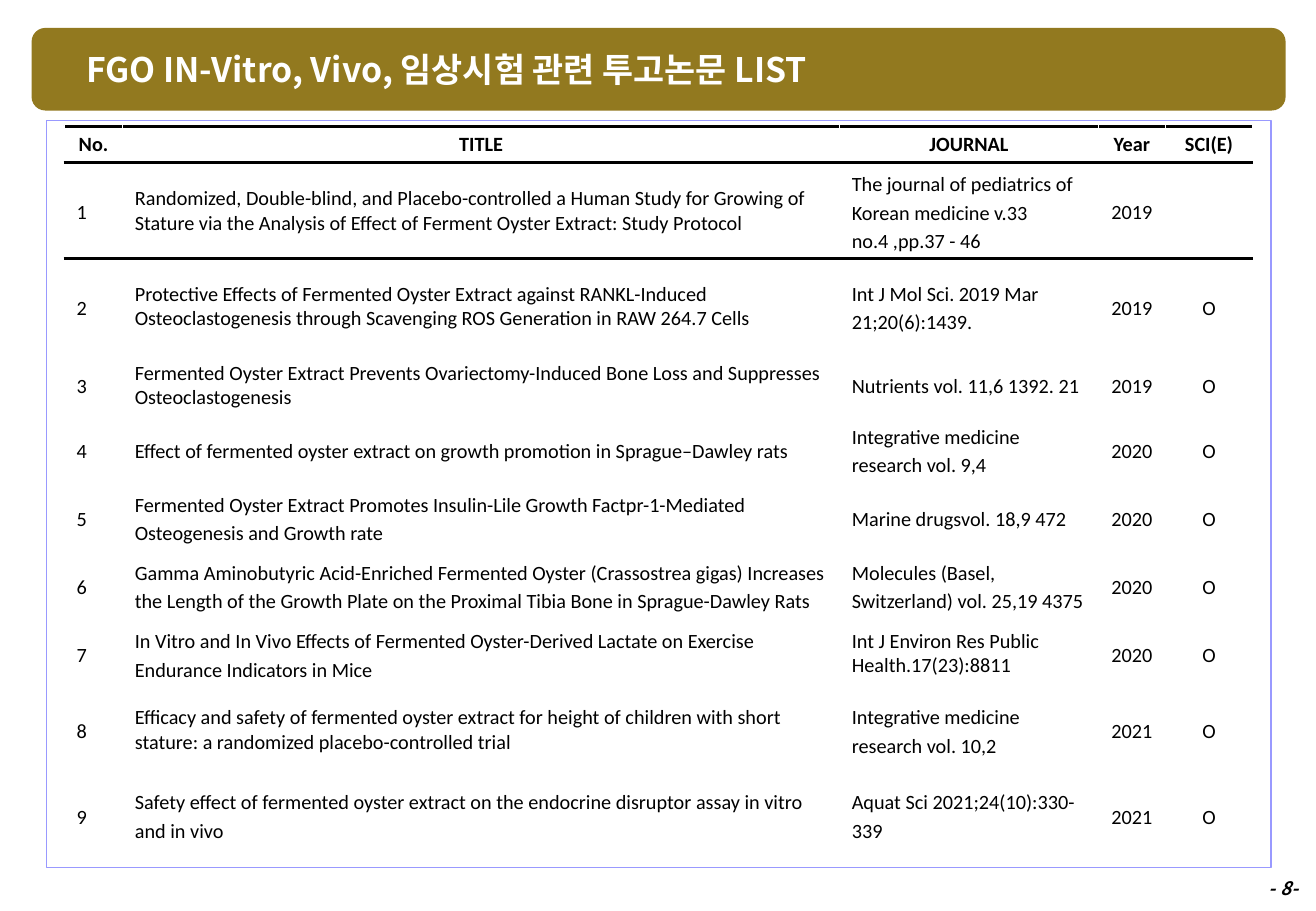
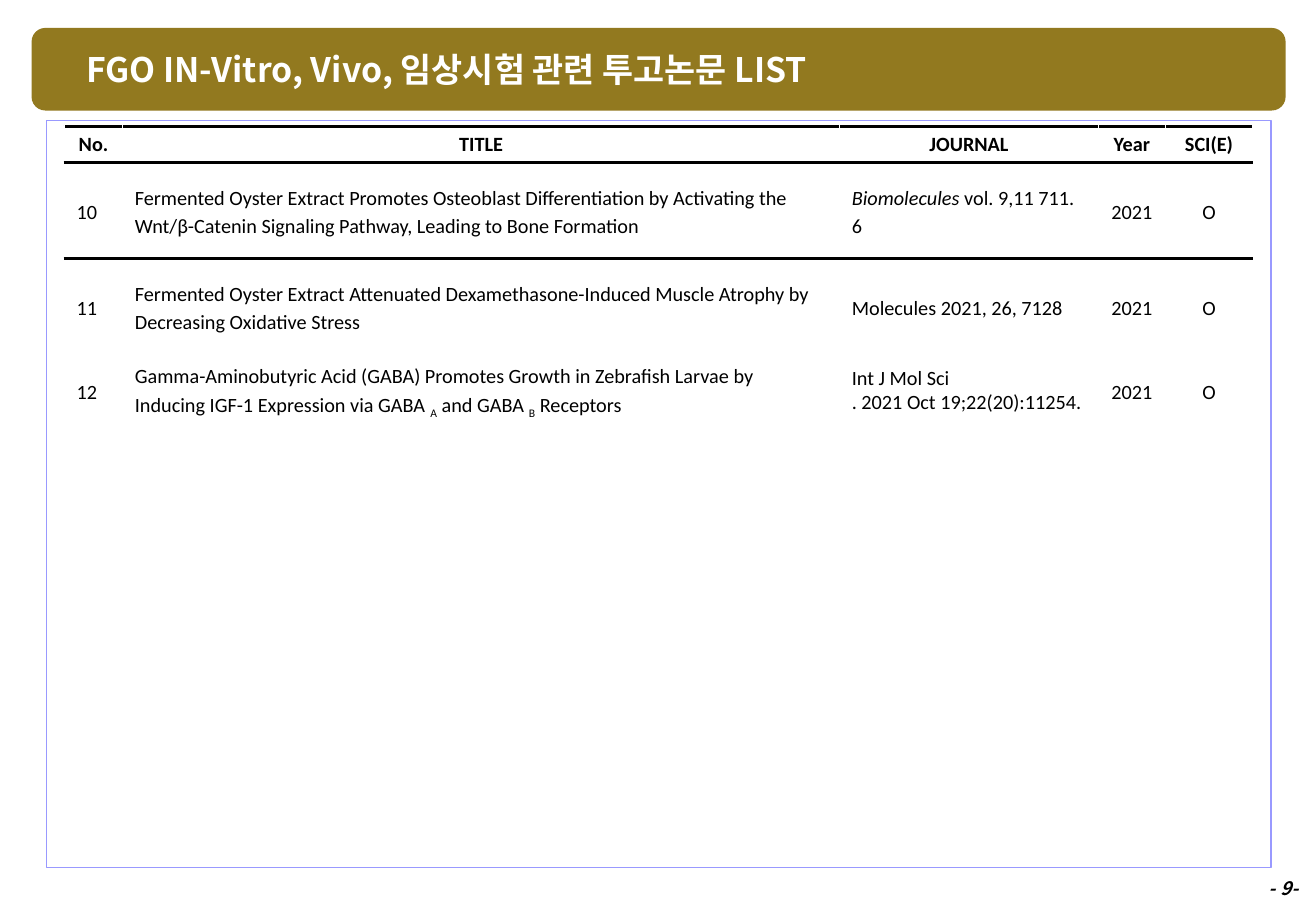
from lxml import etree
from pptx import Presentation
from pptx.dml.color import RGBColor
from pptx.enum import shapes, text
from pptx.oxml.ns import qn
from pptx.util import Inches, Pt

GOLD, LILAC, BLACK, WHITE = "92791F", "9999FF", "000000", "FFFFFF"
HEADING_FONT, TABLE_FONT = "Noto Sans CJK KR", "Calibri"
HEADING = "FGO IN-Vitro, Vivo, 임상시험 관련 투고논문 LIST"

# Column name, width in inches, centred body text
COLUMNS = [
    ("No.", 0.48, False),
    ("TITLE", 5.9, False),
    ("JOURNAL", 2.13, False),
    ("Year", 0.55, True),
    ("SCI(E)", 0.72, True),
]
HEADER_HEIGHT = 0.3

# Row height, title, journal, year, SCI(E) mark.
# A cell with mixed styles is a list of (text, style) spans.
PAGES = {
    8: [
        (0.79, "Randomized, Double-blind, and Placebo-controlled a Human Study for Growing of "
               "Stature via the Analysis of Effect of Ferment Oyster Extract: Study Protocol",
         "The journal of pediatrics of Korean medicine v.33 no.4 ,pp.37 - 46", "2019", ""),
        (0.79, "Protective Effects of Fermented Oyster Extract against RANKL-Induced "
               "Osteoclastogenesis through Scavenging ROS Generation in RAW 264.7 Cells",
         "Int J Mol Sci. 2019 Mar 21;20(6):1439.", "2019", "O"),
        (0.5, "Fermented Oyster Extract Prevents Ovariectomy-Induced Bone Loss and Suppresses "
              "Osteoclastogenesis",
         "Nutrients vol. 11,6 1392. 21", "2019", "O"),
        (0.56, "Effect of fermented oyster extract on growth promotion in Sprague–Dawley rats",
         "Integrative medicine research vol. 9,4", "2020", "O"),
        (0.54, "Fermented Oyster Extract Promotes Insulin-Lile Growth Factpr-1-Mediated "
               "Osteogenesis and Growth rate",
         "Marine drugsvol. 18,9 472", "2020", "O"),
        (0.56, "Gamma Aminobutyric Acid-Enriched Fermented Oyster (Crassostrea gigas) Increases "
               "the Length of the Growth Plate on the Proximal Tibia Bone in Sprague-Dawley Rats",
         "Molecules (Basel, Switzerland) vol. 25,19 4375", "2020", "O"),
        (0.56, "In Vitro and In Vivo Effects of Fermented Oyster-Derived Lactate on Exercise "
               "Endurance Indicators in Mice",
         "Int J Environ Res Public Health.17(23):8811", "2020", "O"),
        (0.7, "Efficacy and safety of fermented oyster extract for height of children with short "
              "stature: a randomized placebo-controlled trial",
         "Integrative medicine research vol. 10,2", "2021", "O"),
        (0.7, "Safety effect of fermented oyster extract on the endocrine disruptor assay in vitro "
              "and in vivo",
         "Aquat Sci 2021;24(10):330-339", "2021", "O"),
    ],
    9: [
        (0.79, "Fermented Oyster Extract Promotes Osteoblast Differentiation by Activating the "
               "Wnt/β-Catenin Signaling Pathway, Leading to Bone Formation",
         [("Biomolecules", "italic"), (" vol. 9,11 711. 6", "")], "2021", "O"),
        (0.79, "Fermented Oyster Extract Attenuated Dexamethasone-Induced Muscle Atrophy by "
               "Decreasing Oxidative Stress",
         "Molecules 2021, 26, 7128", "2021", "O"),
        (0.5, [("Gamma-Aminobutyric Acid (GABA) Promotes Growth in Zebrafish Larvae by "
                "Inducing IGF-1 Expression via GABA ", ""), ("A", "subscript"),
               (" and GABA ", ""), ("B", "subscript"), (" Receptors", "")],
         "Int J Mol Sci\n. 2021 Oct 19;22(20):11254.", "2021", "O"),
    ],
}
SINGLE_SPACED = {(1, "TITLE"), (2, "TITLE"), (3, "TITLE"), (8, "TITLE"),
                 (7, "JOURNAL"), (12, "JOURNAL")}


def colour(value):
    return RGBColor.from_string(value)


def set_font(para, name, size, value, bold=False, italic=False):
    font = para.font
    font.name, font.size, font.bold, font.italic = name, Pt(size), bold, italic
    font.color.rgb = colour(value)
    defaults = para._p.pPr.find(qn("a:defRPr"))
    etree.SubElement(defaults, qn("a:ea"), typeface=name)


def add_box(page, kind, place, fill=None, line=None):
    box = page.shapes.add_shape(kind, *map(Inches, place))
    box.shadow.inherit = False
    if fill:
        box.fill.solid()
        box.fill.fore_color.rgb = colour(fill)
    else:
        box.fill.background()
    if line:
        box.line.color.rgb = colour(line)
        box.line.width = Pt(0.75)
    else:
        box.line.fill.background()


def add_label(page, place, words, size, value, align, anchor, **style):
    frame = page.shapes.add_textbox(*map(Inches, place)).text_frame
    frame.word_wrap = True
    frame.vertical_anchor = anchor
    para = frame.paragraphs[0]
    para.text = words
    para.alignment = align
    set_font(para, HEADING_FONT, size, value, bold=True, **style)


def add_frame(page, number):
    """Draw the heading band, the body outline and the page number."""
    add_box(page, shapes.MSO_SHAPE.ROUNDED_RECTANGLE, (0.26, 0.23, 10.32, 0.68), fill=GOLD)
    add_label(page, (0.61, 0.22, 9.45, 0.69), HEADING, 20, WHITE,
              text.PP_ALIGN.LEFT, text.MSO_ANCHOR.MIDDLE)
    add_box(page, shapes.MSO_SHAPE.RECTANGLE, (0.38, 0.99, 10.08, 6.15), line=LILAC)
    add_label(page, (8.25, 7.17, 2.53, 0.52), f"- {number}-", 11, BLACK,
              text.PP_ALIGN.RIGHT, text.MSO_ANCHOR.TOP, italic=True)


def add_border(cell, edge):
    line = etree.SubElement(cell._tc.get_or_add_tcPr(), qn(f"a:{edge}"), w=str(Pt(2.25)))
    fill = etree.SubElement(line, qn("a:solidFill"))
    etree.SubElement(fill, qn("a:srgbClr"), val=BLACK)


def fill_cell(cell, content, centred, spacing=1.0, bold=False, edges=()):
    for edge in edges:
        add_border(cell, edge)
    cell.fill.background()
    cell.vertical_anchor = text.MSO_ANCHOR.MIDDLE
    frame = cell.text_frame
    if isinstance(content, str):
        frame.text = content
    else:
        for words, style in content:
            span = frame.paragraphs[0].add_run()
            span.text = words
            if style == "italic":
                span.font.italic = True
            elif style == "subscript":
                span.font._element.set("baseline", "-25000")
    for para in frame.paragraphs:
        para.alignment = text.PP_ALIGN.CENTER if centred else text.PP_ALIGN.LEFT
        para.line_spacing = spacing
        set_font(para, TABLE_FONT, 12, BLACK, bold=bold)


def add_papers(page, papers, first_number):
    heights = [HEADER_HEIGHT] + [paper[0] for paper in papers]
    widths = [width for _, width, _ in COLUMNS]
    table = page.shapes.add_table(len(heights), len(widths), Inches(0.53), Inches(1.04),
                                  Inches(sum(widths)), Inches(sum(heights))).table
    table.first_row = table.horz_banding = False
    for row, height in zip(table.rows, heights):
        row.height = Inches(height)
    for index, (name, width, centred) in enumerate(COLUMNS):
        table.columns[index].width = Inches(width)
        fill_cell(table.cell(0, index), name, True, bold=True, edges=("lnT", "lnB"))
        for row, paper in enumerate(papers, 1):
            number = first_number + row - 1
            content = paper[index] if index else str(number)
            spacing = 1.0 if (number, name) in SINGLE_SPACED else 1.15
            fill_cell(table.cell(row, index), content, centred, spacing,
                      edges=("lnT",) if row == 1 else ())


def main():
    deck = Presentation()
    deck.slide_width, deck.slide_height = Inches(10.83), Inches(7.5)
    first_number = 1
    for page_number, papers in PAGES.items():
        page = deck.slides.add_slide(deck.slide_layouts[6])
        add_frame(page, page_number)
        add_papers(page, papers, first_number)
        first_number += len(papers)
    deck.save("out.pptx")


if __name__ == "__main__":
    main()
